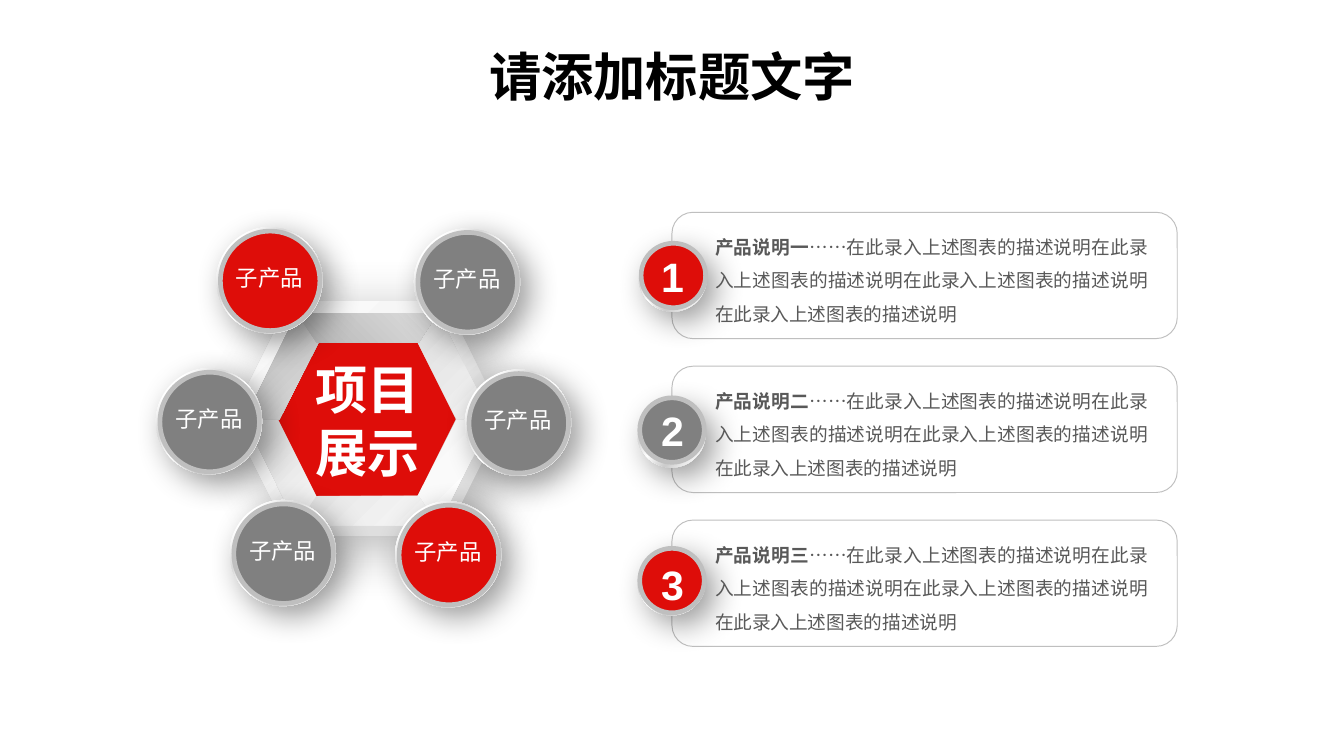
from lxml import etree
from pptx import Presentation
from pptx.dml.color import RGBColor
from pptx.enum.shapes import MSO_SHAPE
from pptx.enum.text import MSO_ANCHOR, PP_ALIGN
from pptx.oxml.ns import qn
from pptx.util import Inches, Pt

OVAL, HEXAGON = MSO_SHAPE.OVAL, MSO_SHAPE.HEXAGON
TRAPEZOID, ROUNDED = MSO_SHAPE.TRAPEZOID, MSO_SHAPE.ROUNDED_RECTANGLE
CENTER, JUSTIFY = PP_ALIGN.CENTER, PP_ALIGN.JUSTIFY
TOP, MIDDLE = MSO_ANCHOR.TOP, MSO_ANCHOR.MIDDLE
LATIN, CJK = "Arial", "Noto Sans CJK SC"
COLORS = {"red": "DE0D09", "gray": "808080", "ring": "BFBFBF", "white": "FFFFFF",
          "text": "595959", "black": "000000", "hex_shadow": "696969"}

# Content
TITLE = "请添加标题文字"
HUB = "项目展示"
NODE = "子产品"
DETAIL = "……" + "在此录入上述图表的描述说明" * 4
# Heading, badge colour, badge left and top, drop of the disc in its rim
CARDS = [("产品说明一", "red", 4.75, 1.81, 0),
         ("产品说明二", "gray", 4.74, 2.97, -0.01),
         ("产品说明三", "red", 4.74, 4.07, 0.01)]
NODES = [(1.71, 3.72, "gray"), (2.94, 3.73, "red"), (3.46, 2.75, "gray"),
         (3.08, 1.70, "gray"), (1.61, 1.69, "red"), (1.16, 2.74, "gray")]
CARD_TOP, CARD_BOTTOM_TOP = 1.58, 3.87   # tops of the first and last card
CARD_PITCH = (CARD_BOTTOM_TOP - CARD_TOP) / (len(CARDS) - 1)

# Gradients: angle, then (position, colour) stops
METAL = 45, [(16, "FFFFFF"), (33, "D9D9D9"), (49, "FFFFFF"), (69, "CCCCCC"), (91, "FFFFFF")]
PLATE = 225, [(17, "DEDEDE"), (37, "E0E0E0"), (61, "F6F6F6"), (100, "FFFFFF")]
BEVEL = 45, [(0, "CBCBCB"), (32, "DEDEDE"), (57, "F5F5F5"), (100, "FFFFFF")]
DARK = 45, [(0, "B4B4B4"), (100, "DFDFDF")]
LIGHT = 45, [(0, "E6E6E6"), (100, "F7F7F7")]
SIDE = 45, [(0, "DEDEDE"), (100, "F4F4F4")]
# Shadows: colour, opacity, blur, distance, angle
DISC_SHADOW = "black", 40, 17, 7, 45
HEX_SHADOW = "hex_shadow", 47, 30, 10, 40

# Hexagon frame outlines
INNER = [(2.36, 2.55), (2.08, 3.12), (2.36, 3.69), (3.11, 3.69), (3.40, 3.12), (3.11, 2.55)]
OUTER = [(2.21, 2.33), (3.26, 2.33), (3.66, 3.12), (3.26, 3.91), (2.21, 3.91), (1.82, 3.12)]
RIGHT_FACET = [(3.25, 2.32), (3.11, 2.55), (3.40, 3.12), (3.66, 3.11)]
LEFT_FACET = [(2.21, 2.33), (2.37, 2.55), (2.08, 3.12), (1.82, 3.12)]


def rgb(name):
    return RGBColor.from_string(COLORS[name])


def paint(sp, fill=None, line=None, width=0.5, shadow=None):
    """Fill is a colour name, a gradient tuple or None."""
    sp.shadow.inherit = False
    sp.fill.background()
    if isinstance(fill, str):
        sp.fill.solid()
        sp.fill.fore_color.rgb = rgb(fill)
    elif fill:
        angle, stops = fill
        grad = etree.Element(qn("a:gradFill"), rotWithShape="1")
        gs_list = etree.SubElement(grad, qn("a:gsLst"))
        for pos, color in stops:
            gs = etree.SubElement(gs_list, qn("a:gs"), pos=str(pos * 1000))
            etree.SubElement(gs, qn("a:srgbClr"), val=color)
        etree.SubElement(grad, qn("a:lin"), ang=str(angle * 60000), scaled="0")
        sp_pr = sp._element.spPr
        sp_pr.replace(sp_pr.find(qn("a:noFill")), grad)
    if line:
        sp.line.color.rgb = rgb(line)
        sp.line.width = Pt(width)
    else:
        sp.line.fill.background()
    if shadow:
        color, alpha, blur, dist, angle = shadow
        outer = etree.SubElement(
            sp._element.spPr.find(qn("a:effectLst")), qn("a:outerShdw"),
            blurRad=str(Pt(blur)), dist=str(Pt(dist)), dir=str(angle * 60000),
            algn="tl", rotWithShape="0")
        clr = etree.SubElement(outer, qn("a:srgbClr"), val=COLORS[color])
        etree.SubElement(clr, qn("a:alpha"), val=str(alpha * 1000))
    return sp


def add_shape(shapes, kind, box, **style):
    return paint(shapes.add_shape(kind, *map(Inches, box)), **style)


def add_outline(shapes, contours, fill):
    contours = [[(Inches(x), Inches(y)) for x, y in points] for points in contours]
    builder = shapes.build_freeform(*contours[0][0])
    for i, points in enumerate(contours):
        if i:
            builder.move_to(*points[0])
        builder.add_line_segments(points[1:], close=True)
    return paint(builder.convert_to_shape(), fill)


def write(sp, runs, size, color="white", align=CENTER, anchor=TOP, spacing=None,
          font=LATIN, margins=(0, 0)):
    """Runs are (text, bold) pairs."""
    tf = sp.text_frame
    side, edge = map(Inches, margins)
    for key, value in {"word_wrap": True, "vertical_anchor": anchor, "margin_left": side,
                       "margin_right": side, "margin_top": edge,
                       "margin_bottom": edge}.items():
        setattr(tf, key, value)
    p = tf.paragraphs[0]
    p.alignment, p.line_spacing = align, spacing
    for text, bold in runs:
        r = p.add_run()
        r.text = text
        for key, value in {"size": Pt(size), "bold": bold, "name": font}.items():
            setattr(r.font, key, value)
        r.font.color.rgb = rgb(color)
        etree.SubElement(r._r.get_or_add_rPr(), qn("a:ea"), typeface=CJK)


def add_text(shapes, box, runs, size, **style):
    write(shapes.add_textbox(*map(Inches, box)), runs, size, **style)


def add_disc(shapes, x, y, size, color, inset, disc):
    """Metal rim with a coloured disc on it; returns the group's shapes."""
    group = shapes.add_group_shape().shapes
    add_shape(group, OVAL, (x, y, size, size), fill=METAL, shadow=DISC_SHADOW)
    dx, dy = inset
    add_shape(group, OVAL, (x + dx, y + dy, disc, disc), fill=color, line="ring", width=2.5)
    return group


prs = Presentation()
prs.slide_width = Inches(10)
prs.slide_height = prs.slide_width * 9 // 16
s = prs.slides.add_slide(prs.slide_layouts[5])
shapes = s.shapes

# Title
title = shapes.title
title.left, title.top, title.width, title.height = map(Inches, (3.26, 0.13, 3.48, 0.87))
write(title, [(TITLE, True)], 28, color="black", anchor=MIDDLE, font=CJK,
      margins=(0.07, 0.04))

# Description cards with numbered badges
for i, (heading, color, x, y, drop) in enumerate(CARDS):
    top = CARD_TOP + i * CARD_PITCH
    add_shape(shapes, ROUNDED, (5, top, 3.76, 0.94), line="ring")
    add_disc(shapes, x, y, 0.51, color, (0.02, drop), 0.48)
    add_text(shapes, (4.92, top + 0.29, 0.16, 0.37), [(str(i + 1), True)], 22)
    add_text(shapes, (5.32, top + 0.09, 3.22, 0.76), [(heading, True), (DETAIL, False)],
             10, color="text", align=JUSTIFY, spacing=1.5)

# Bevelled hexagon hub
hub = shapes.add_group_shape().shapes
add_shape(hub, HEXAGON, (1.72, 2.24, 2.03, 1.75), fill=PLATE, shadow=HEX_SHADOW)
add_outline(hub, [INNER, OUTER], BEVEL)
add_shape(hub, HEXAGON, (2.07, 2.55, 1.32, 1.14), fill="red")
base = add_shape(hub, TRAPEZOID, (2.21, 3.69, 1.05, 0.22), fill=LIGHT)
add_outline(hub, [RIGHT_FACET], SIDE)
add_outline(hub, [LEFT_FACET], DARK)
roof = add_shape(hub, TRAPEZOID, (2.21, 2.33, 1.05, 0.22), fill=DARK)
roof._element.spPr.find(qn("a:xfrm")).set("flipV", "1")
for facet in (base, roof):
    facet.adjustments[0] = 0.66
add_text(shapes, (2.25, 2.66, 0.97, 0.94), [(HUB, True)], 28)

# Product nodes around the hub
for x, y, color in NODES:
    group = add_disc(shapes, x, y, 0.79, color, (0.03, 0.03), 0.74)
    label = add_shape(group, OVAL, (x + 0.02, y, 0.75, 0.75))
    write(label, [(NODE, False)], 12, anchor=MIDDLE)

prs.save("out.pptx")
